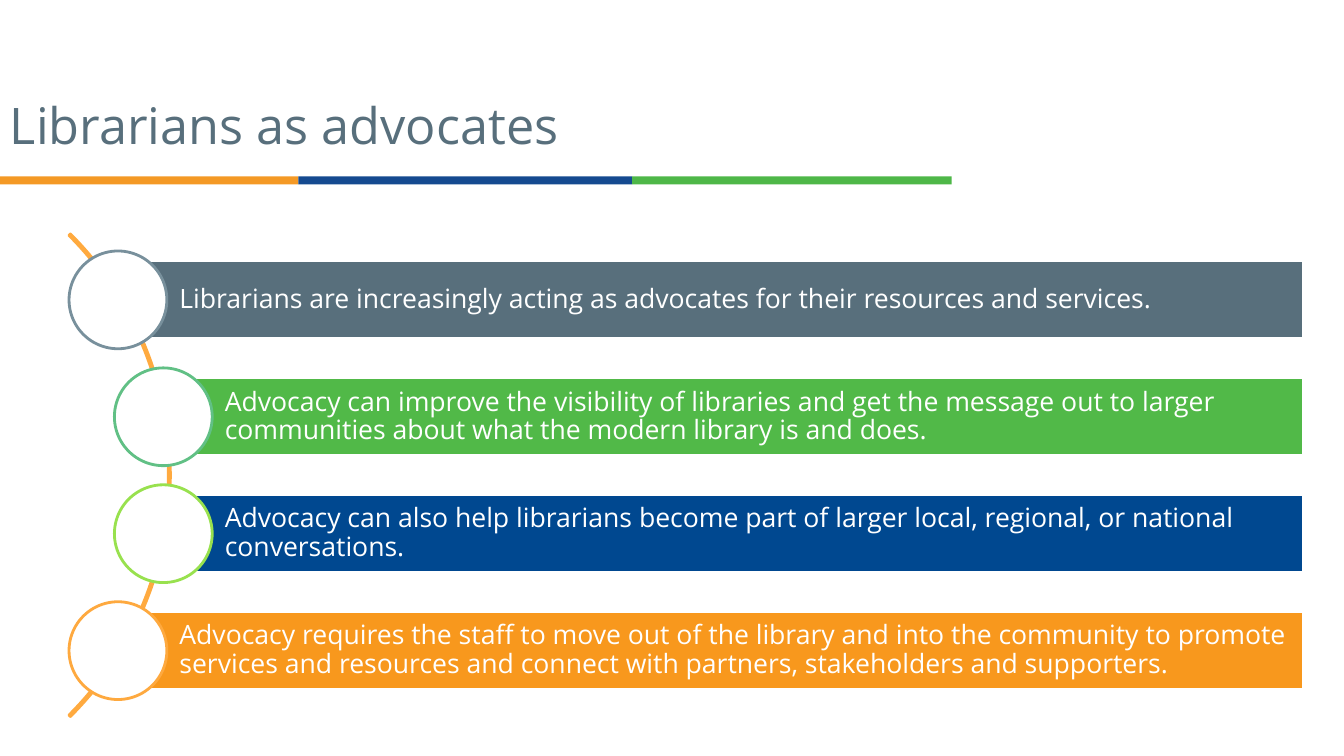
from pptx import Presentation
from pptx.dml.color import RGBColor
from pptx.enum import shapes, text
from pptx.util import Inches, Pt

WHITE = RGBColor(0xFF, 0xFF, 0xFF)
SLATE = RGBColor(0x58, 0x6F, 0x7C)
RULE_ORANGE = RGBColor(0xF4, 0x99, 0x25)
RULE_BLUE = RGBColor(0x15, 0x4A, 0x90)
RULE_GREEN = RGBColor(0x4E, 0xB7, 0x48)
BAR_GREEN = RGBColor(0x51, 0xB9, 0x48)
BAR_BLUE = RGBColor(0x00, 0x48, 0x90)
BAR_ORANGE = RGBColor(0xF8, 0x98, 0x1D)
ARC_ORANGE = RGBColor(0xFF, 0xAA, 0x3F)
RING_GREY = RGBColor(0x78, 0x90, 0x9C)
RING_GREEN = RGBColor(0x61, 0xC0, 0x85)
RING_LIME = RGBColor(0x98, 0xE1, 0x4E)
RING_ORANGE = RGBColor(0xFE, 0xA9, 0x3F)

SHAPE = shapes.MSO_SHAPE
ANCHOR = text.MSO_ANCHOR


class SlideBuilder:
    font = "Open Sans"
    line_width = Pt(2)

    def __init__(self, slide):
        self.s = slide

    def shape(self, kind, x, y, w, h, fill=None, line=None):
        sp = self.s.shapes.add_shape(kind, Inches(x), Inches(y), Inches(w), Inches(h))
        sp.shadow.inherit = False
        if fill is None:
            sp.fill.background()
        else:
            sp.fill.solid()
            sp.fill.fore_color.rgb = fill
        if line is None:
            sp.line.fill.background()
        else:
            sp.line.color.rgb = line
            sp.line.width = self.line_width
        return sp

    def label(self, sp, words, size, color, anchor, left, right):
        tf = sp.text_frame
        tf.word_wrap = True
        tf.vertical_anchor = anchor
        tf.margin_left, tf.margin_right = Inches(left), Inches(right)
        tf.margin_top = tf.margin_bottom = Inches(0.05)
        p = tf.paragraphs[0]
        p.text = words
        p.alignment = text.PP_ALIGN.LEFT
        p.line_spacing = 0.9
        p.font.name, p.font.size = self.font, Pt(size)
        p.font.color.rgb = color

    def title(self, words, x, y, w, h):
        sp = self.s.shapes.add_textbox(Inches(x), Inches(y), Inches(w), Inches(h))
        self.label(sp, words, 36, SLATE, ANCHOR.BOTTOM, 0.1, 0.1)

    def arc(self, x, y, size):
        sp = self.shape(SHAPE.BLOCK_ARC, x, y, size, size, line=ARC_ORANGE)
        # Start and end angles (315 and 45 degrees), then band thickness
        for i, value in enumerate((189, 27, 0.003)):
            sp.adjustments[i] = value

    def point(self, words, x, y, fill, ring):
        bar = self.shape(SHAPE.RECTANGLE, x, y, BAR_RIGHT - x, BAR_HEIGHT, fill, WHITE)
        self.label(bar, words, 19, WHITE, ANCHOR.MIDDLE, 0.61, 0.05)
        self.shape(SHAPE.OVAL, x - CIRCLE / 2, y + (BAR_HEIGHT - CIRCLE) / 2,
                   CIRCLE, CIRCLE, WHITE, ring)


BAR_RIGHT, BAR_HEIGHT, BAR_TOP, BAR_PITCH = 12.93, 0.77, 2.59, 1.16
CIRCLE = 0.97
OUTER, INNER = 1.17, 1.62

POINTS = [
    ("Librarians are increasingly acting as advocates for their resources and services.",
     OUTER, SLATE, RING_GREY),
    ("Advocacy can improve the visibility of libraries and get the message out to larger "
     "communities about what the modern library is and does.",
     INNER, BAR_GREEN, RING_GREEN),
    ("Advocacy can also help librarians become part of larger local, regional, or national "
     "conversations.",
     INNER, BAR_BLUE, RING_LIME),
    ("Advocacy requires the staff to move out of the library and into the community to promote "
     "services and resources and connect with partners, stakeholders and supporters.",
     OUTER, BAR_ORANGE, RING_ORANGE),
]


def main():
    prs = Presentation()
    prs.slide_width, prs.slide_height = Inches(13.33), Inches(7.5)
    b = SlideBuilder(prs.slides.add_slide(prs.slide_layouts[6]))

    # Title and three-colour rule
    x = 0
    for width, color in ((2.96, RULE_ORANGE), (3.31, RULE_BLUE), (3.17, RULE_GREEN)):
        b.shape(SHAPE.RECTANGLE, x, 1.75, width, 0.08, color)
        x += width
    b.title("Librarians as advocates", 0, 0.41, 8.43, 1.18)

    # Curved list
    b.arc(-5.08, 1.33, 6.77)
    for i, (words, left, fill, ring) in enumerate(POINTS):
        b.point(words, left, BAR_TOP + i * BAR_PITCH, fill, ring)

    prs.save("out.pptx")


if __name__ == "__main__":
    main()
